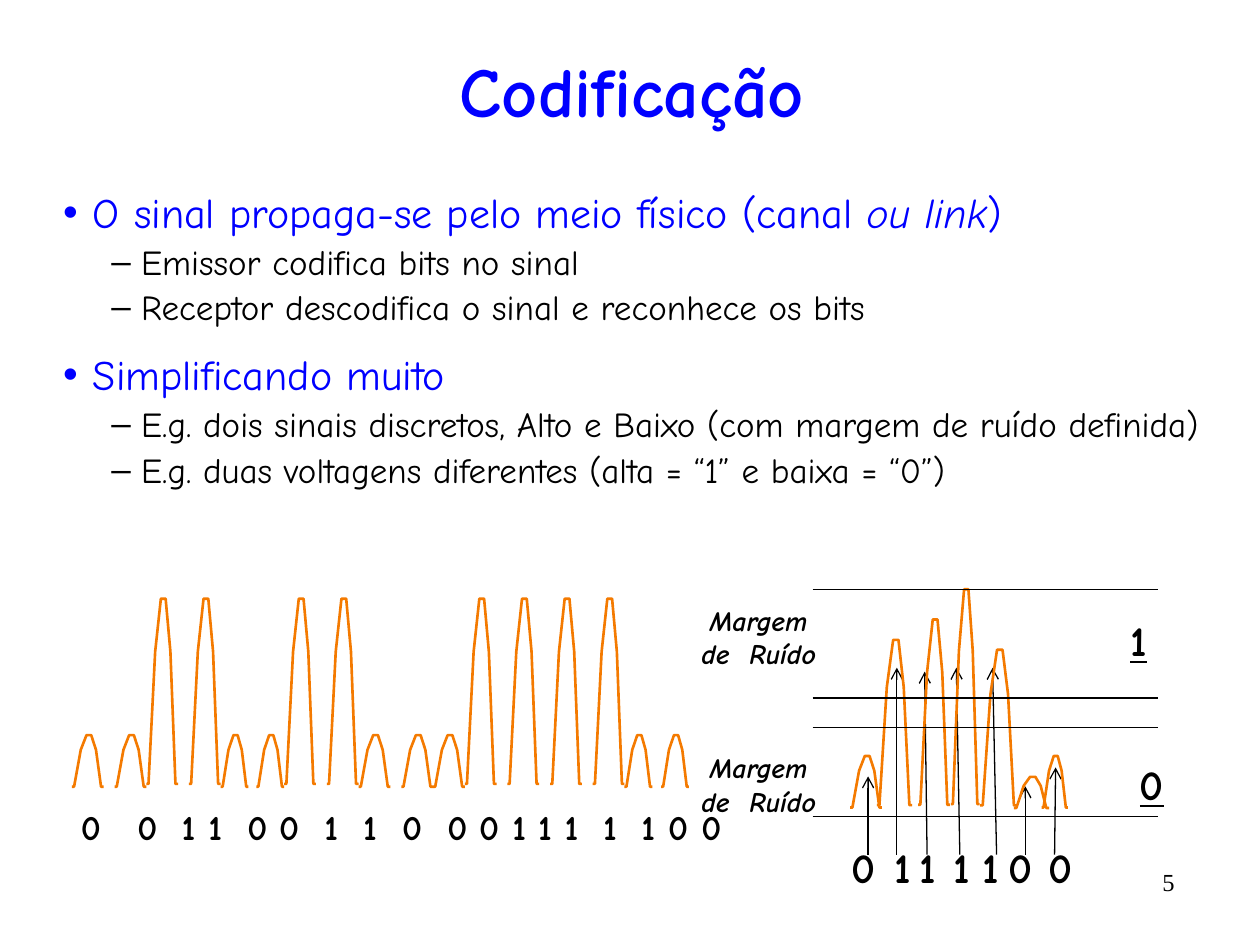
from lxml import etree
from pptx import Presentation
from pptx.dml.color import RGBColor
from pptx.enum.shapes import MSO_CONNECTOR
from pptx.enum.text import MSO_ANCHOR, MSO_AUTO_SIZE, PP_ALIGN
from pptx.oxml.ns import qn
from pptx.util import Cm, Pt

STRAIGHT = MSO_CONNECTOR.STRAIGHT
MIDDLE = MSO_ANCHOR.MIDDLE
NO_FIT = MSO_AUTO_SIZE.NONE
LEFT, CENTER, RIGHT = PP_ALIGN.LEFT, PP_ALIGN.CENTER, PP_ALIGN.RIGHT

FONT = "Comic Neue"
BLUE, BLACK, ORANGE = "0000FF", "000000", "F47A00"

PULSE = [(0, 0.98), (0.07, 0.98), (0.28, 0.28), (0.46, 0),
         (0.61, 0), (0.76, 0.28), (0.92, 0.98), (1, 0.98)]
TRAIN_BITS = "00110011000111100"
TRAIN_X = [0, 0.86, 1.5, 2.36, 3, 3.72, 4.28, 5.14, 5.78,
           6.64, 7.28, 7.92, 8.78, 9.64, 10.5, 11.14, 11.88]
TRAIN_NARROW = {4, 5, 15, 16}
SEQUENCE = "001100110000111" "100"
SEQUENCE = "001100110001111100"
SEQUENCE_STOPS = [1.34, 2.17, 2.71, 3.56, 4.2, 5.05, 5.83, 6.68, 7.59,
                  8.23, 8.84, 9.36, 9.89, 10.67, 11.44, 12.04, 12.71]
NOISY_PULSES = [(0.76, 0.64, 1.06), (1.3, 0.71, 3.4), (2.13, 0.64, 3.81),
                (2.79, 0.58, 4.42), (3.38, 0.74, 3.2), (4.06, 0.71, 0.64),
                (4.62, 0.53, 1.06)]
LIMITS = [0, 2.18, 2.77, 4.57]
READINGS = [("0", 1.03, 1.12, 1.12, 3.76), ("1", 1.82, 1.7, 1.7, 1.57),
            ("1", 2.32, 2.31, 2.26, 1.65), ("1", 3.01, 2.97, 2.9, 1.57),
            ("1", 3.59, 3.71, 3.63, 1.57), ("0", 4.2, 4.29, 4.29, 3.96),
            ("0", 4.99, 4.88, 4.9, 3.58)]
TOPICS = [
    (0, [("O sinal propaga-se pelo meio físico (canal", False),
         (" ou link", True), (")", False)]),
    (1, [("Emissor codifica bits no sinal", False)]),
    (1, [("Receptor descodifica o sinal e reconhece os bits", False)]),
    (0, [("Simplificando muito", False)]),
    (1, [("E.g. dois sinais discretos, Alto e Baixo "
          "(com margem de ruído definida)", False)]),
    (1, [("E.g. duas voltagens diferentes (alta = “1” e baixa = “0”)", False)]),
]


def rgb(value):
    """Return the colour of a hex string."""
    return RGBColor.from_string(value)


def place(shape, x, y, w, h):
    """Move and size a shape, in centimetres."""
    shape.left, shape.top, shape.width, shape.height = Cm(x), Cm(y), Cm(w), Cm(h)


def add_run(p, text, size, color=BLACK, bold=False, italic=False,
            underline=False, font=FONT):
    """Add one formatted run to a paragraph."""
    r = p.add_run()
    r.text = text
    f = r.font
    f.name, f.size, f.color.rgb = font, Pt(size), rgb(color)
    f.bold, f.italic, f.underline = bold, italic, underline


def add_text(s, box, lines, size, align=CENTER, wrap=True, **style):
    """Add a text box with one paragraph per line."""
    tf = s.shapes.add_textbox(*map(Cm, box)).text_frame
    tf.word_wrap = wrap
    for i, line in enumerate(lines):
        p = tf.paragraphs[0] if i == 0 else tf.add_paragraph()
        p.alignment = align
        add_run(p, line, size, **style)
    return tf


def add_line(s, x1, y1, x2, y2, arrow=False):
    """Add a thin black line, with an open arrowhead at its end if asked."""
    c = s.shapes.add_connector(STRAIGHT, Cm(x1), Cm(y1), Cm(x2), Cm(y2))
    c.line.color.rgb, c.line.width = rgb(BLACK), Pt(0.75)
    if arrow:
        etree.SubElement(c.line._get_or_add_ln(), qn("a:tailEnd"), type="arrow")
    etree.SubElement(c._element.spPr, qn("a:effectLst"))


def add_pulse(s, x, bottom, w, h):
    """Draw one signal pulse standing on the given bottom."""
    points = [(Cm(x + fx * w), Cm(bottom - h + fy * h)) for fx, fy in PULSE]
    builder = s.shapes.build_freeform(*points[0])
    builder.add_line_segments(points[1:], close=False)
    sp = builder.convert_to_shape()
    sp.shadow.inherit = False
    sp.fill.background()
    sp.line.color.rgb, sp.line.width = rgb(ORANGE), Pt(1.5)


def fill_title(s, x, y, w, h):
    """Write the slide title."""
    sp = s.shapes.title
    place(sp, x, y, w, h)
    tf = sp.text_frame
    tf.auto_size, tf.vertical_anchor = NO_FIT, MIDDLE
    p = tf.paragraphs[0]
    p.alignment = CENTER
    add_run(p, "Codificação", 40, BLUE, bold=True)


def fill_topics(s, x, y, w, h):
    """Write the two-level list."""
    sp = s.placeholders[1]
    place(sp, x, y, w, h)
    tf = sp.text_frame
    tf.auto_size = NO_FIT
    for i, (level, runs) in enumerate(TOPICS):
        p = tf.paragraphs[0] if i == 0 else tf.add_paragraph()
        p.level = level
        p.space_before = Pt(2 if level else 12)
        pPr = p._p.get_or_add_pPr()
        pPr.set("marL", str(Cm(1.57 if level else 0.6)))
        pPr.set("indent", str(-Cm(0.6)))
        for text, italic in runs:
            add_run(p, text, 20 if level else 24, BLACK if level else BLUE,
                    italic=italic)


def draw_train(s, x, y):
    """Draw the clean pulse train with its bit sequence below."""
    for i, (bit, dx) in enumerate(zip(TRAIN_BITS, TRAIN_X)):
        add_pulse(s, x + dx, y + 3.81, 0.56 if i in TRAIN_NARROW else 0.64,
                  3.81 if bit == "1" else 1.06)
    tf = add_text(s, (x - 0.23, y + 4.04, 13.72, 1.95), ["\t".join(SEQUENCE)],
                  20, LEFT, bold=True)
    tf.margin_left = Cm(0.41)
    tabs = etree.SubElement(tf.paragraphs[0]._p.get_or_add_pPr(), qn("a:tabLst"))
    for stop in SEQUENCE_STOPS:
        etree.SubElement(tabs, qn("a:tab"), pos=str(Cm(stop)), algn="ctr")


def draw_noise_margins(s, x, y, w):
    """Draw the noisy pulses, the margin limits and the bits read."""
    for digit, center, x1, x2, tip in READINGS:
        add_line(s, x + x1, y + 5.34, x + x2, y + tip, arrow=True)
        add_text(s, (x + center - 0.52, y + 4.95, 1.04, 1.27), [digit], 24,
                 bold=True)
    for dx, pulse_w, pulse_h in NOISY_PULSES:
        add_pulse(s, x + dx, y + 4.41, pulse_w, pulse_h)
    for dy in LIMITS:
        add_line(s, x, y + dy, x + w, y + dy)
    for digit, dx, dy in [("1", 6.05, 0.38), ("0", 6.32, 3.28)]:
        add_text(s, (x + dx, y + dy, 1.04, 1.27), [digit], 24, wrap=False,
                 bold=True, underline=True)
    for dy in (0.15, 3.12):
        add_text(s, (x - 2.75, y + dy, 3.33, 1.63), ["Margem", "de  Ruído"],
                 16, wrap=False, bold=True, italic=True)


def main():
    """Build and save the slide."""
    prs = Presentation()
    prs.slide_width, prs.slide_height = Cm(25.4), Cm(19.05)
    s = prs.slides.add_slide(prs.slide_layouts[1])
    fill_title(s, 0.64, 0.64, 24.2, 2.31)
    fill_topics(s, 1.02, 3.63, 23.62, 7.29)
    draw_train(s, 1.45, 12.07)
    draw_noise_margins(s, 16.38, 11.89, 6.96)
    add_text(s, (21.39, 17.35, 2.54, 1.07), ["5"], 14, RIGHT,
             font="Times New Roman")
    prs.save("out.pptx")


if __name__ == "__main__":
    main()
